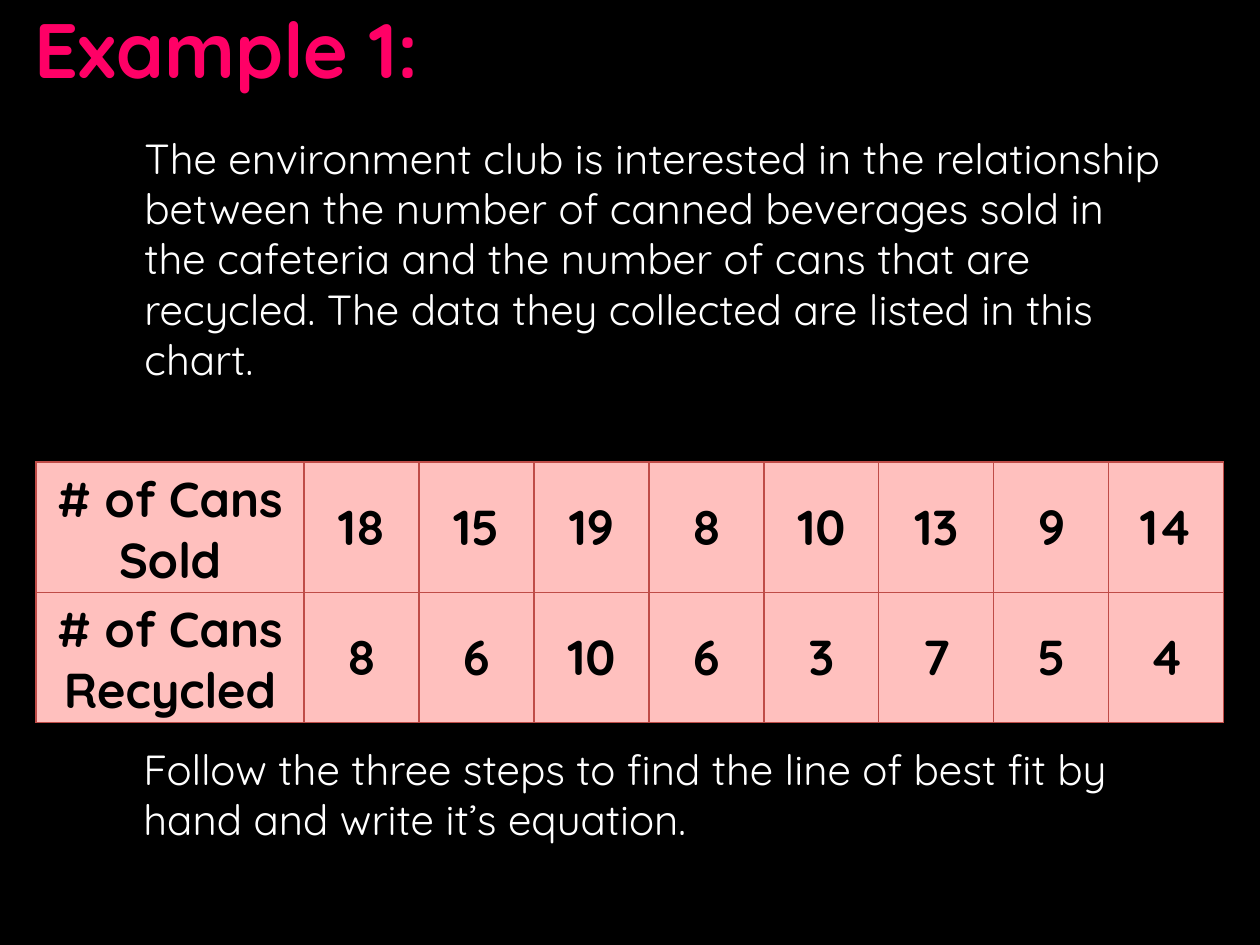
import pptx
import pptx.util
import pptx.dml.color
import pptx.enum.text
import pptx.oxml
import pptx.oxml.ns

HUES = {"back": "000000", "title": "FF0066", "body": "FFFFFF",
        "cell": "FFC0BE", "ink": "000000", "rule": "BF4C48"}
SCALE = 914400 // 126
FONT = "Quicksand"
ROWS = [
    ["# of Cans Sold", 18, 15, 19, 8, 10, 13, 9, 14],
    ["# of Cans Recycled", 8, 6, 10, 6, 3, 7, 5, 4],
]
INTRO = ("The environment club is interested in the relationship between the "
         "number of canned beverages sold in the cafeteria and the number of "
         "cans that are recycled. The data they collected are listed in this "
         "chart.")
TASK = ("Follow the three steps to find the line of best fit by hand and "
        "write it’s equation.")


def hue(name):
    """Return the named colour."""
    return pptx.dml.color.RGBColor.from_string(HUES[name])


def px(count):
    """Turn px into EMU."""
    return pptx.util.Emu(count * SCALE)


class Deck:
    """Hold the style and the current slide."""

    def __init__(self):
        """Start a deck with one title-only slide."""
        self.show = pptx.Presentation()
        self.show.slide_width = pptx.util.Inches(10)
        self.show.slide_height = pptx.util.Inches(7.5)
        self.slide = self.show.slides.add_slide(self.show.slide_layouts[5])
        fill = self.slide.background.fill
        fill.solid()
        fill.fore_color.rgb = hue("back")

    def label(self, frame, text, size, name, align, bold=False):
        """Set the text of a frame and format its runs."""
        frame.text = text
        frame.word_wrap = True
        for para in frame.paragraphs:
            para.alignment = align
            for run in para.runs:
                run.font.name = FONT
                run.font.size = pptx.util.Pt(size)
                run.font.bold = bold
                run.font.color.rgb = hue(name)

    def title(self, text, left, top, width, height):
        """Place and fill the title."""
        box = self.slide.shapes.title
        box.left, box.top = px(left), px(top)
        box.width, box.height = px(width), px(height)
        self.label(box.text_frame, text, 44, "title",
                   pptx.enum.text.PP_ALIGN.LEFT, True)
        box.text_frame.vertical_anchor = pptx.enum.text.MSO_ANCHOR.MIDDLE

    def body(self, text, left, top, width, height):
        """Add an indented paragraph."""
        box = self.slide.shapes.add_textbox(
            px(left), px(top), px(width), px(height))
        frame = box.text_frame
        self.label(frame, text, 24, "body", pptx.enum.text.PP_ALIGN.LEFT)
        frame.paragraphs[0]._p.get_or_add_pPr().set("marL", str(px(48)))

    def edge(self, cell):
        """Rule all four sides of a cell."""
        props = cell._tc.get_or_add_tcPr()
        for spot, side in enumerate(("lnL", "lnR", "lnT", "lnB")):
            line = pptx.oxml.parse_xml(
                f'<a:{side} {pptx.oxml.ns.nsdecls("a")} w="9525"><a:solidFill>'
                f'<a:srgbClr val="{HUES["rule"]}"/></a:solidFill></a:{side}>')
            props.insert(spot, line)

    def table(self, rows, left, top, head, wide, high):
        """Add a table with a wide first column."""
        count = len(rows[0])
        grid = self.slide.shapes.add_table(
            len(rows), count, px(left), px(top),
            px(head + wide * (count - 1)), px(high * len(rows))).table
        for spot, col in enumerate(grid.columns):
            col.width = px(wide if spot else head)
        for row, data in zip(grid.rows, rows):
            row.height = px(high)
            for cell, value in zip(row.cells, data):
                self.label(cell.text_frame, str(value), 28, "ink",
                           pptx.enum.text.PP_ALIGN.CENTER, True)
                cell.vertical_anchor = pptx.enum.text.MSO_ANCHOR.MIDDLE
                cell.fill.solid()
                cell.fill.fore_color.rgb = hue("cell")
                self.edge(cell)


def main():
    """Build the slide."""
    deck = Deck()
    deck.title("Example 1:", 22, -31, 1134, 157)
    deck.body(INTRO, 84, 126, 1092, 267)
    deck.table(ROWS, 36, 462, 268, 115, 130)
    deck.body(TASK, 83, 737, 1092, 115)
    deck.show.save("out.pptx")


if __name__ == "__main__":
    main()
